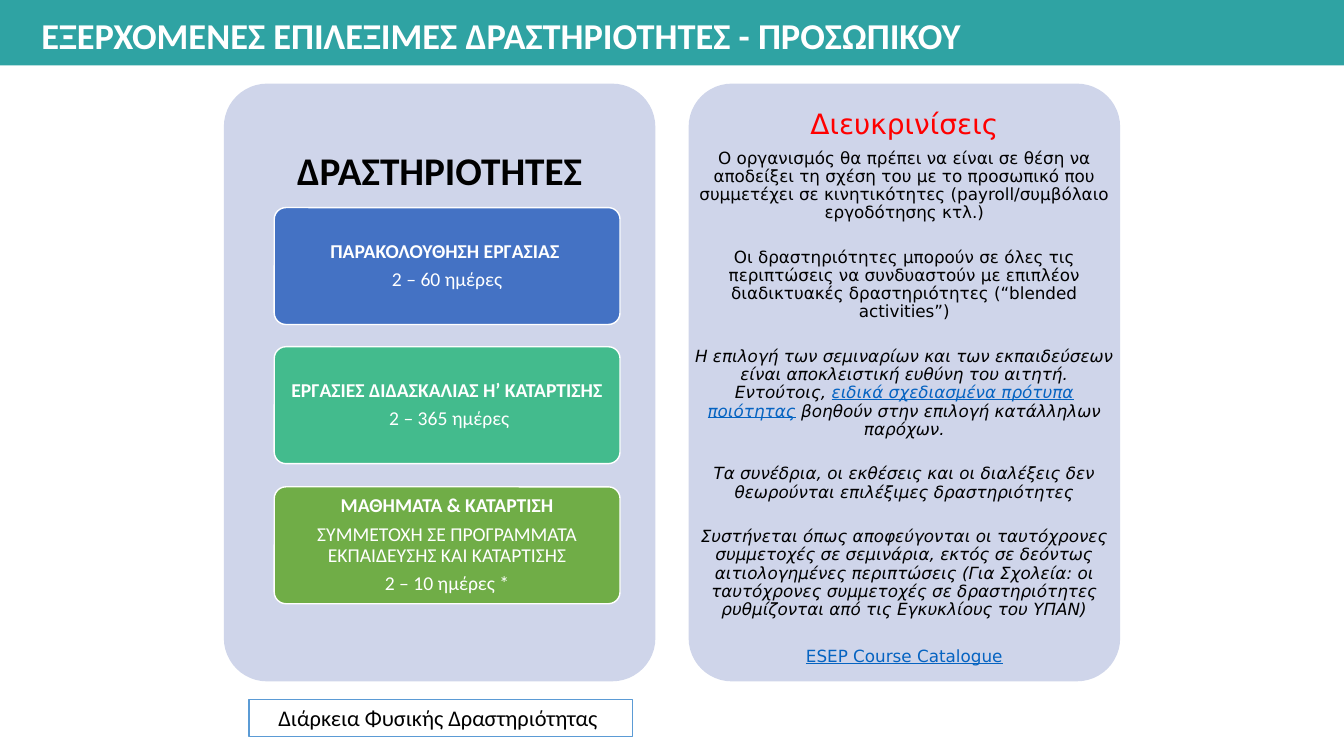
from dataclasses import dataclass

from pptx import Presentation
from pptx.dml.color import RGBColor
from pptx.enum.shapes import MSO_SHAPE
from pptx.enum.text import MSO_ANCHOR, MSO_AUTO_SIZE, PP_ALIGN
from pptx.util import Pt

RECT, ROUND = MSO_SHAPE.RECTANGLE, MSO_SHAPE.ROUNDED_RECTANGLE
TOP, MIDDLE = MSO_ANCHOR.TOP, MSO_ANCHOR.MIDDLE
LEFT, CENTER = PP_ALIGN.LEFT, PP_ALIGN.CENTER
NO_FIT = MSO_AUTO_SIZE.NONE
TITLE_ONLY = 5
PX = 9144


@dataclass(frozen=True)
class Theme:
    """Colours, fonts and type sizes of the slide."""
    banner: str = "2FA3A3"
    panel: str = "CFD5EA"
    outline: str = "5B9BD5"
    white: str = "FFFFFF"
    black: str = "000000"
    red: str = "FF0000"
    link: str = "0563C1"
    font: str = "Calibri"
    note_font: str = "DejaVu Sans"
    title: int = 26
    heading: int = 28
    card: int = 14
    caption: int = 16
    note_heading: int = 20
    note: int = 12


T = Theme()

CARDS = [
    ("4472C4", ["ΠΑΡΑΚΟΛΟΥΘΗΣΗ ΕΡΓΑΣΙΑΣ ", "2 – 60 ημέρες"]),
    ("43BB8D", ["ΕΡΓΑΣΙΕΣ ΔΙΔΑΣΚΑΛΙΑΣ Η’ ΚΑΤΑΡΤΙΣΗΣ", " 2 – 365 ημέρες"]),
    ("70AD47", ["ΜΑΘΗΜΑΤΑ & ΚΑΤΑΡΤΙΣΗ",
                "ΣΥΜΜΕΤΟΧΗ ΣΕ ΠΡΟΓΡΑΜΜΑΤΑ ΕΚΠΑΙΔΕΥΣΗΣ ΚΑΙ ΚΑΤΑΡΤΙΣΗΣ",
                "2 – 10 ημέρες *"]),
]

PLAIN_NOTES = [
    "Ο οργανισμός θα πρέπει να είναι σε θέση να αποδείξει τη σχέση του με το προσωπικό "
    "που συμμετέχει σε κινητικότητες (payroll/συμβόλαιο εργοδότησης κτλ.)",
    "Οι δραστηριότητες μπορούν σε όλες τις περιπτώσεις να συνδυαστούν με επιπλέον "
    "διαδικτυακές δραστηριότητες (“blended activities”)",
]
LINKED_NOTE = [
    "Η επιλογή των σεμιναρίων και των εκπαιδεύσεων είναι αποκλειστική ευθύνη του αιτητή. "
    "Εντούτοις, ",
    "ειδικά σχεδιασμένα πρότυπα ποιότητας",
    " βοηθούν στην επιλογή κατάλληλων παρόχων.",
]
ITALIC_NOTES = [
    "Τα συνέδρια, οι εκθέσεις και οι διαλέξεις δεν θεωρούνται επιλέξιμες δραστηριότητες",
    "Συστήνεται όπως αποφεύγονται οι ταυτόχρονες συμμετοχές σε σεμινάρια, εκτός σε δεόντως "
    "αιτιολογημένες περιπτώσεις (Για Σχολεία: οι ταυτόχρονες συμμετοχές σε δραστηριότητες "
    "ρυθμίζονται από τις Εγκυκλίους του ΥΠΑΝ)",
]
CATALOGUE = "ΕSEP Course Catalogue"


def rgb(color):
    """Turn a hex string into a colour."""
    return RGBColor.from_string(color)


def add_box(s, kind, box, fill=None, line=None, width=1):
    """Add a preset shape with the given fill and outline."""
    sp = s.shapes.add_shape(kind, *(v * PX for v in box))
    sp.shadow.inherit = False
    if kind == ROUND:
        sp.adjustments[0] = 0.1
    if fill:
        sp.fill.solid()
        sp.fill.fore_color.rgb = rgb(fill)
    else:
        sp.fill.background()
    if line:
        sp.line.color.rgb = rgb(line)
        sp.line.width = Pt(width)
    else:
        sp.line.fill.background()
    return sp


def set_frame(sp, anchor=MIDDLE, side=10, top=5, bottom=5, wrap=True):
    """Set wrapping, anchor and insets, and return the text frame."""
    tf = sp.text_frame
    tf.auto_size = NO_FIT
    tf.word_wrap = wrap
    tf.vertical_anchor = anchor
    tf.margin_left = tf.margin_right = side * PX
    tf.margin_top, tf.margin_bottom = top * PX, bottom * PX
    return tf


def set_paragraph(p, after=0, spacing=0.9, align=CENTER):
    """Set the alignment and spacing of a paragraph."""
    p.alignment = align
    p.line_spacing = spacing
    p.space_before, p.space_after = Pt(0), Pt(after)


def set_font(item, size, color, name=T.font, bold=False, italic=False, underline=False):
    """Format the font of a run or of every run in a paragraph."""
    for r in getattr(item, "runs", [item]):
        f = r.font
        f.name, f.size = name, Pt(size)
        f.bold, f.italic, f.underline = bold, italic, underline
        f.color.rgb = rgb(color)


def add_banner(s, box):
    """Place the title on its coloured band."""
    x, y, w, h = box
    band = add_box(s, RECT, box, T.banner)
    title = s.shapes.title
    title._element.addprevious(band._element)
    title.left, title.top, title.width, title.height = (
        v * PX for v in (x + 31, y + 8, 941, h - 11))
    tf = set_frame(title, TOP, wrap=False)
    tf.text = "ΕΞΕΡΧΟΜΕΝΕΣ ΕΠΙΛΕΞΙΜΕΣ ΔΡΑΣΤΗΡΙΟΤΗΤΕΣ - ΠΡΟΣΩΠΙΚΟΥ"
    p = tf.paragraphs[0]
    set_paragraph(p, spacing=1.0, align=LEFT)
    set_font(p, T.title, T.white, bold=True)


def add_card(s, box, color, lines):
    """Add one activity card with a bold first line."""
    tf = set_frame(add_box(s, ROUND, box, color, T.white), side=4, top=3, bottom=3)
    tf.text = "\n".join(lines)
    for i, p in enumerate(tf.paragraphs):
        set_paragraph(p, after=5)
        set_font(p, T.card, T.white, bold=i == 0)


def add_activities(s, box):
    """Add the left panel with its heading and cards."""
    x, y, w, h = box
    add_box(s, ROUND, box, T.panel)
    heading = s.shapes.add_textbox(x * PX, y * PX, w * PX, h * 3 // 10 * PX)
    tf = set_frame(heading, side=12, top=12, bottom=12)
    tf.text = "ΔΡΑΣΤΗΡΙΟΤΗΤΕΣ"
    set_paragraph(tf.paragraphs[0], after=10)
    set_font(tf.paragraphs[0], T.heading, T.black, bold=True)
    for i, (color, lines) in enumerate(CARDS):
        add_card(s, (x + 50, y + 123 + 277 * i // 2, 343, 116), color, lines)


def add_notes(s, box):
    """Add the right panel with the clarifications."""
    add_box(s, ROUND, box, T.panel)
    tf = set_frame(s.shapes.add_textbox(*(v * PX for v in box)), TOP, side=5, top=26)
    tf.text = "\n".join(["Διευκρινίσεις", *PLAIN_NOTES, "", *ITALIC_NOTES, CATALOGUE])
    heading, *notes = tf.paragraphs
    set_paragraph(heading, after=7)
    set_font(heading, T.note_heading, T.red, T.note_font)
    linked, catalogue = notes[len(PLAIN_NOTES)], notes[-1]
    for part in LINKED_NOTE:
        linked.add_run().text = part
    for i, p in enumerate(notes):
        set_paragraph(p, after=0 if p is catalogue else 19)
        italic = len(PLAIN_NOTES) <= i < len(notes) - 1
        set_font(p, T.note, T.black, T.note_font, italic=italic)
    notes[-2].space_after = Pt(21)
    set_font(linked.runs[1], T.note, T.link, T.note_font, italic=True, underline=True)
    set_font(catalogue, T.note, T.link, T.note_font, underline=True)


def add_caption(s, box):
    """Add the outlined caption under the left panel."""
    tf = set_frame(add_box(s, RECT, box, line=T.outline, width=0.75), TOP)
    tf.text = "Διάρκεια Φυσικής Δραστηριότητας "
    set_paragraph(tf.paragraphs[0], spacing=1.0)
    set_font(tf.paragraphs[0], T.caption, T.black)


def main():
    """Build the slide and save it."""
    prs = Presentation()
    prs.slide_width, prs.slide_height = 1333 * PX, 750 * PX
    s = prs.slides.add_slide(prs.slide_layouts[TITLE_ONLY])
    add_banner(s, (0, 0, 1333, 65))
    add_caption(s, (247, 694, 380, 37))
    add_activities(s, (222, 83, 428, 593))
    add_notes(s, (683, 83, 428, 593))
    prs.save("out.pptx")


if __name__ == "__main__":
    main()
